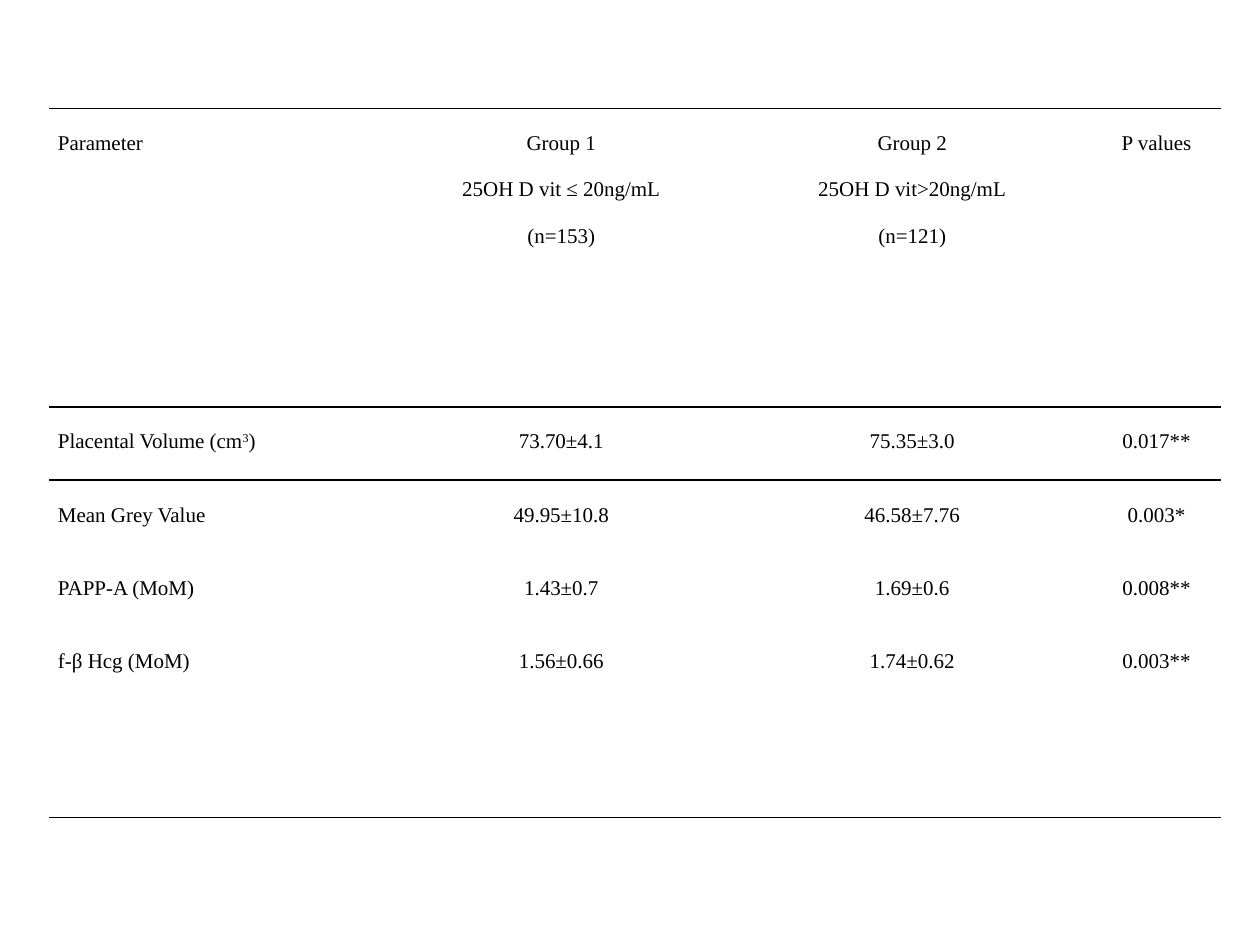
"""Build a slide with a ruled table of placental parameters by vitamin D group."""
from dataclasses import dataclass

from lxml.etree import SubElement
from pptx import Presentation
from pptx.dml.color import RGBColor
from pptx.enum.text import MSO_ANCHOR, PP_ALIGN as Align
from pptx.oxml.ns import qn
from pptx.table import Table, _Cell as Cell
from pptx.util import Inches, Pt


@dataclass(frozen=True)
class Theme:
    font: str = "Times New Roman"
    size: Pt = Pt(12)
    ink: str = "000000"
    rule: Pt = Pt(1)
    spacing: float = 2.0
    plain_style: str = "{2D5ABB26-0587-4C30-8999-92F81FD0307C}"


@dataclass(frozen=True)
class Row:
    height: float
    texts: tuple[str, ...]
    label_align: Align = Align.JUSTIFY
    rules: tuple[str, ...] = ()


THEME = Theme()
LEFT, TOP = 0.39, 0.86
COLUMNS = (2.71, 2.71, 2.86, 1.02)
ROWS = (
    Row(2.37, ("Parameter", "Group 1\n25OH D vit ≤ 20ng/mL\n(n=153)",
               "Group 2\n25OH D vit>20ng/mL\n(n=121)", "P values"),
        Align.LEFT, ("lnT", "lnB")),
    Row(0.58, ("Placental Volume (cm^3^)", "73.70±4.1", "75.35±3.0", "0.017**"),
        rules=("lnT",)),
    Row(0.58, ("Mean Grey Value", "49.95±10.8", "46.58±7.76", "0.003*")),
    Row(0.58, ("PAPP-A (MoM)", "1.43±0.7", "1.69±0.6", "0.008**")),
    Row(1.52, ("f-β Hcg (MoM)", "1.56±0.66", "1.74±0.62", "0.003**"),
        rules=("lnB",)),
)
CELL_FORMAT = {
    "margin_left": Inches(0.07), "margin_right": Inches(0.07),
    "margin_top": 0, "margin_bottom": 0, "vertical_anchor": MSO_ANCHOR.TOP,
}
FONT_FORMAT = {"name": THEME.font, "size": THEME.size}


def apply(target: object, values: dict) -> None:
    """Set each named attribute of the target."""
    for name, value in values.items():
        setattr(target, name, value)


def draw_rule(cell: Cell, side: str) -> None:
    """Add a solid border to one side of a cell."""
    ln = SubElement(cell._tc.get_or_add_tcPr(), qn(f"a:{side}"), w=str(THEME.rule))
    fill = SubElement(ln, qn("a:solidFill"))
    SubElement(fill, qn("a:srgbClr"), val=THEME.ink)


def write_text(cell: Cell, text: str, align: Align) -> None:
    """Write one paragraph per line, raising text between carets."""
    tf = cell.text_frame
    for i, line in enumerate(text.split("\n")):
        p = tf.add_paragraph() if i else tf.paragraphs[0]
        apply(p, {"alignment": align, "line_spacing": THEME.spacing})
        for j, part in enumerate(line.split("^")):
            r = p.add_run()
            r.text = part
            apply(r.font, FONT_FORMAT)
            r.font.color.rgb = RGBColor.from_string(THEME.ink)
            if j % 2:
                r._r.get_or_add_rPr().set("baseline", "30000")


def fill_row(table: Table, index: int, row: Row) -> None:
    """Format and fill one table row."""
    table.rows[index].height = Inches(row.height)
    for col, text in enumerate(row.texts):
        cell = table.cell(index, col)
        apply(cell, CELL_FORMAT)
        for side in row.rules:
            draw_rule(cell, side)
        cell.fill.background()
        write_text(cell, text, Align.CENTER if col else row.label_align)


def main() -> None:
    """Create and save the presentation."""
    prs = Presentation()
    apply(prs, {"slide_width": Inches(10), "slide_height": Inches(7.5)})
    s = prs.slides.add_slide(prs.slide_layouts[6])
    table = s.shapes.add_table(
        len(ROWS), len(COLUMNS), Inches(LEFT), Inches(TOP),
        Inches(sum(COLUMNS)), Inches(sum(row.height for row in ROWS))).table
    apply(table, {"first_row": False, "horz_banding": False})
    table._tbl.tblPr.find(qn("a:tableStyleId")).text = THEME.plain_style
    for column, width in zip(table.columns, COLUMNS):
        column.width = Inches(width)
    for index, row in enumerate(ROWS):
        fill_row(table, index, row)
    prs.save("out.pptx")


if __name__ == "__main__":
    main()
